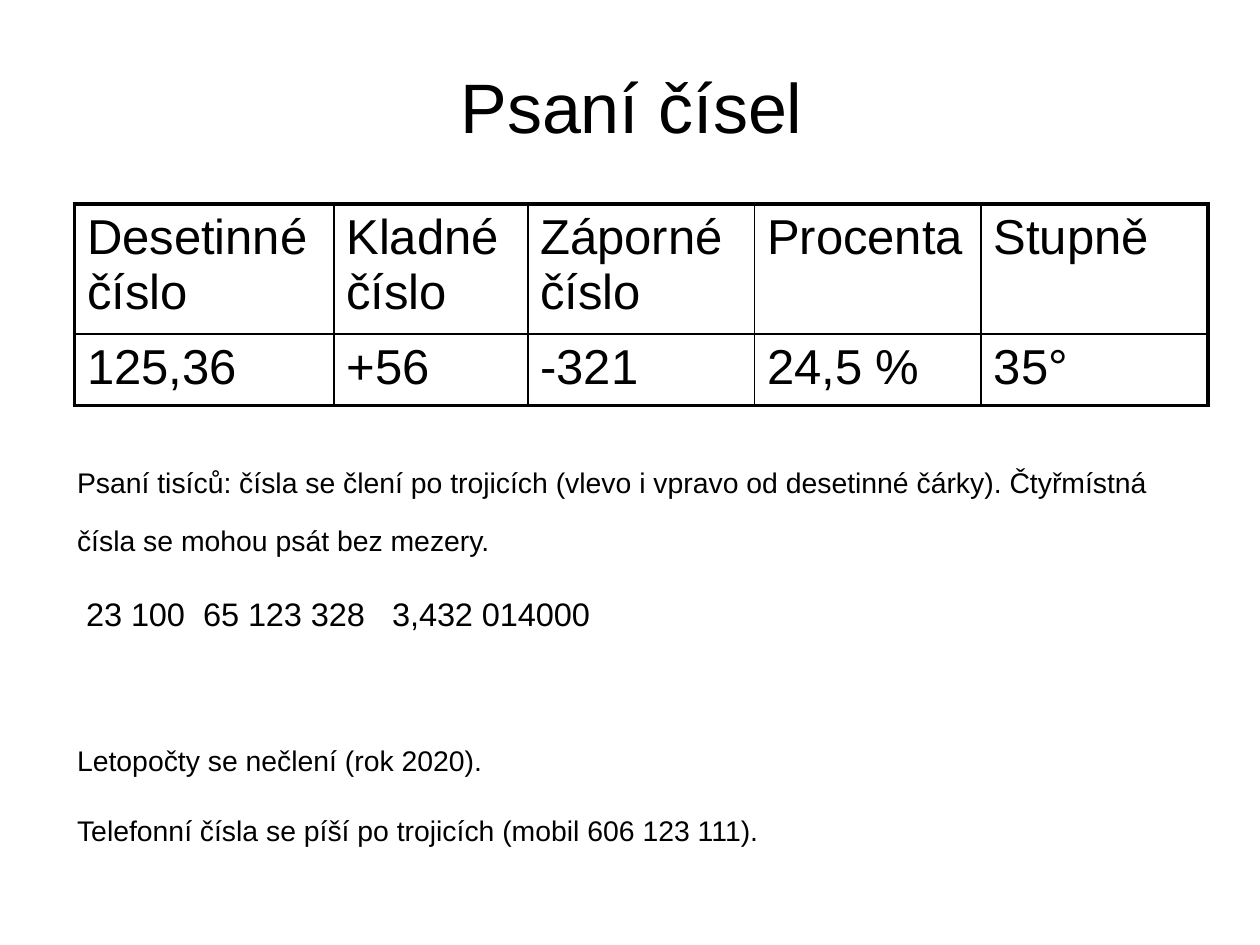
from lxml import etree
from pptx import Presentation
from pptx import util as u
from pptx.dml import color
from pptx.enum import text
from pptx.oxml import ns

# Content
TITLE = "Psaní čísel"
ROWS = [
    ["Desetinné číslo", "Kladné číslo", "Záporné číslo", "Procenta", "Stupně"],
    ["125,36", "+56", "-321", "24,5 %", "35°"],
]
# Wording, size, space before
NOTES = [
    ("Psaní tisíců: čísla se člení po trojicích (vlevo i vpravo od desetinné "
     "čárky). Čtyřmístná čísla se mohou psát bez mezery.", 28, 0),
    (" 23 100\t65 123 328\t3,432 014000", 32, 6.4),
    ("Letopočty se nečlení (rok 2020).", 28, 47),
    ("Telefonní čísla se píší po trojicích (mobil 606 123 111).", 28, 6.4),
]

# Layout
COLUMN_WIDTHS = [5.23, 3.91, 4.57, 4.57, 4.57]
ROW_HEIGHTS = [2.62, 1.45]
TAB_STOPS = [5.08, 12.7]
INK = "000000"
THIN, THICK = 1, 2.25


def rgb(value):
    return color.RGBColor.from_string(value)


def place(box, left, top, width, height):
    box.left, box.top = u.Cm(left), u.Cm(top)
    box.width, box.height = u.Cm(width), u.Cm(height)


def style(para, size):
    for span in para.runs:
        span.font.name, span.font.size = "Arial", u.Pt(size)
        span.font.color.rgb = rgb(INK)


def add_border(cell, side, points):
    line = etree.SubElement(cell._tc.get_or_add_tcPr(), ns.qn(f"a:ln{side}"),
                            w=str(u.Pt(points)))
    fill = etree.SubElement(line, ns.qn("a:solidFill"))
    etree.SubElement(fill, ns.qn("a:srgbClr"), val=INK)


def add_tabs(para):
    props = para._p.get_or_add_pPr()
    props.set("marL", "0")
    props.set("indent", "0")
    etree.SubElement(props, ns.qn("a:buNone"))
    tabs = etree.SubElement(props, ns.qn("a:tabLst"))
    for stop in TAB_STOPS:
        etree.SubElement(tabs, ns.qn("a:tab"), pos=str(u.Cm(stop)), algn="l")


deck = Presentation()
deck.slide_width, deck.slide_height = u.Cm(25.4), u.Cm(19.05)
page = deck.slides.add_slide(deck.slide_layouts[1])

# Title, lifted by a deep bottom margin
title = page.shapes.title
place(title, 1.3, 0.33, 22.86, 5.21)
frame = title.text_frame
frame.text = TITLE
frame.auto_size = text.MSO_AUTO_SIZE.NONE
frame.vertical_anchor = text.MSO_ANCHOR.MIDDLE
frame.margin_bottom = u.Cm(1.75)
frame.paragraphs[0].alignment = text.PP_ALIGN.CENTER
style(frame.paragraphs[0], 40)

# Table with a thick outer frame
table = page.shapes.add_table(
    len(ROWS), len(COLUMN_WIDTHS), u.Cm(1.5), u.Cm(4.11),
    u.Cm(sum(COLUMN_WIDTHS)), u.Cm(sum(ROW_HEIGHTS))).table
table.first_row = table.horz_banding = False
for column, width in zip(table.columns, COLUMN_WIDTHS):
    column.width = u.Cm(width)
for row, height in zip(table.rows, ROW_HEIGHTS):
    row.height = u.Cm(height)
last_row, last_column = len(ROWS) - 1, len(COLUMN_WIDTHS) - 1
for r, words in enumerate(ROWS):
    for c, word in enumerate(words):
        cell = table.cell(r, c)
        cell.text = word
        style(cell.text_frame.paragraphs[0], 28)
        outer = {"L": c == 0, "R": c == last_column,
                 "T": r == 0, "B": r == last_row}
        for side, is_outer in outer.items():
            add_border(cell, side, THICK if is_outer else THIN)
        cell.fill.background()

# Notes in raised text
body = page.placeholders[1]
place(body, 1.3, 9.12, 22.86, 5.41)
frame = body.text_frame
frame.auto_size = text.MSO_AUTO_SIZE.NONE
frame.text = "\n".join(words for words, _, _ in NOTES)
for para, (_, size, gap) in zip(frame.paragraphs, NOTES):
    add_tabs(para)
    para.space_before = u.Pt(gap)
    style(para, size)
    for span in para.runs:
        span._r.get_or_add_rPr().set("baseline", "30000")

deck.save("out.pptx")
